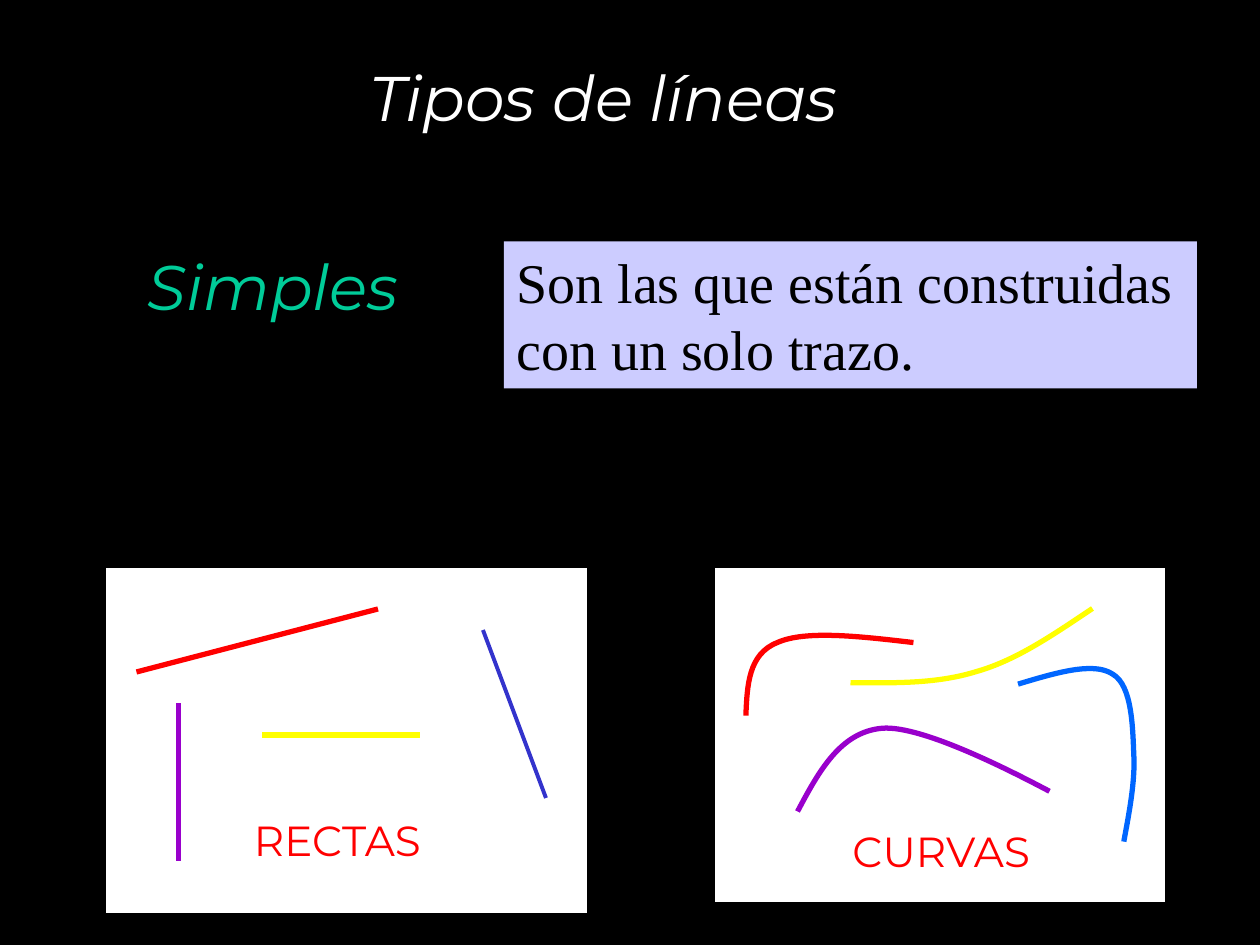
from pptx import Presentation, util as u
from pptx.dml.color import RGBColor
from pptx.enum import shapes, text
from pptx.oxml.ns import qn
from lxml import etree

BLACK = RGBColor(0x00, 0x00, 0x00)
WHITE = RGBColor(0xFF, 0xFF, 0xFF)
GREEN = RGBColor(0x00, 0xCC, 0x99)
LILAC = RGBColor(0xCC, 0xCC, 0xFF)
RED = RGBColor(0xFF, 0x00, 0x00)
YELLOW = RGBColor(0xFF, 0xFF, 0x00)
PURPLE = RGBColor(0x99, 0x00, 0xCC)
INDIGO = RGBColor(0x33, 0x33, 0xCC)
BLUE = RGBColor(0x00, 0x66, 0xFF)

CELL = 1 / 12  # the grid has twelve cells to the inch

LINES = [  # start, end, colour, width
    ((13, 64), (36, 58), RED, 3),
    ((46, 60), (52, 76), INDIGO, 2.25),
    ((25, 70), (40, 70), YELLOW, 3),
    ((17, 67), (17, 82), PURPLE, 3),
]
CURVES = [  # colour, then start and three points per Bezier arc, in inches
    (RED, [(5.92, 5.68), (5.93, 5.44), (5.94, 5.19), (6.17, 5.1),
           (6.39, 5), (6.82, 5.05), (7.25, 5.1)]),
    (BLUE, [(8.08, 5.43), (8.38, 5.34), (8.68, 5.25), (8.83, 5.35),
            (8.99, 5.44), (8.99, 5.79), (9, 6.01),
            (9.01, 6.24), (8.94, 6.56), (8.92, 6.68)]),
    (PURPLE, [(6.33, 6.44), (6.5, 6.12), (6.67, 5.81), (7, 5.78),
              (7.33, 5.75), (8.12, 6.17), (8.33, 6.28)]),
    (YELLOW, [(6.75, 5.42), (7.09, 5.42), (7.43, 5.43), (7.75, 5.33),
              (8.07, 5.24), (8.37, 5.03), (8.67, 4.83)]),
]


def grid(*cells):
    return [u.Inches(n * CELL) for n in cells]


def write(shape, words, size, color, font="Montserrat", italic=False,
          align=text.PP_ALIGN.LEFT, wrap=True):
    frame = shape.text_frame
    frame.text = words
    frame.word_wrap = wrap
    frame.vertical_anchor = text.MSO_ANCHOR.TOP
    para = frame.paragraphs[0]
    para.alignment = align
    style = para.runs[0].font
    style.name, style.size, style.italic = font, u.Pt(size), italic
    style.color.rgb = color


def head(slide, box, words, color):
    write(slide.shapes.add_textbox(*grid(*box)), words, 36, color,
          italic=True, align=text.PP_ALIGN.CENTER, wrap=False)


def label(slide, box, words):
    write(slide.shapes.add_textbox(*grid(*box)), words, 24, RED)


def panel(slide, box, fill, edge=None):
    rect = slide.shapes.add_shape(shapes.MSO_SHAPE.RECTANGLE, *grid(*box))
    rect.shadow.inherit = False
    rect.fill.solid()
    rect.fill.fore_color.rgb = fill
    if edge is None:
        rect.line.fill.background()
    else:
        stroke(rect, edge, 0.75)
    return rect


def stroke(shape, color, width):
    shape.line.color.rgb = color
    shape.line.width = u.Pt(width)


def straight(slide, start, end, color, width):
    line = slide.shapes.add_connector(
        shapes.MSO_CONNECTOR.STRAIGHT, *grid(*start, *end))
    stroke(line, color, width)
    etree.SubElement(line._element.spPr, qn("a:effectLst"))


def bend(shape):
    """Turn each three straight segments into one cubic Bezier arc."""
    path = next(shape._element.iter(qn("a:path")))
    legs = path.findall(qn("a:lnTo"))
    for i in range(0, len(legs), 3):
        arc = etree.SubElement(path, qn("a:cubicBezTo"))
        for leg in legs[i:i + 3]:
            arc.append(leg[0])
            path.remove(leg)


def curve(slide, color, knots):
    dots = [(u.Inches(x), u.Inches(y)) for x, y in knots]
    pen = slide.shapes.build_freeform(*dots[0])
    pen.add_line_segments(dots[1:], close=False)
    shape = pen.convert_to_shape()
    bend(shape)
    shape.shadow.inherit = False
    shape.fill.background()
    stroke(shape, color, 3)


def main():
    deck = Presentation()
    deck.slide_width, deck.slide_height = u.Inches(10), u.Inches(7.5)
    slide = deck.slides.add_slide(deck.slide_layouts[6])
    slide.background.fill.solid()
    slide.background.fill.fore_color.rgb = BLACK

    head(slide, (19, 5, 77, 10), "Tipos de líneas", WHITE)
    head(slide, (9, 23, 34, 8.5), "Simples", GREEN)
    note = panel(slide, (48, 23, 66, 14), LILAC)
    write(note, "Son las que están construidas con un solo trazo.",
          32, BLACK, font="Times New Roman")

    panel(slide, (10, 54, 46, 33), WHITE, BLACK)
    for line in LINES:
        straight(slide, *line)
    label(slide, (23, 77, 22, 6), "RECTAS")

    panel(slide, (68, 54, 43, 32), WHITE, BLACK)
    label(slide, (80, 78, 22, 6), "CURVAS")
    for color, knots in CURVES:
        curve(slide, color, knots)

    deck.save("out.pptx")


if __name__ == "__main__":
    main()
